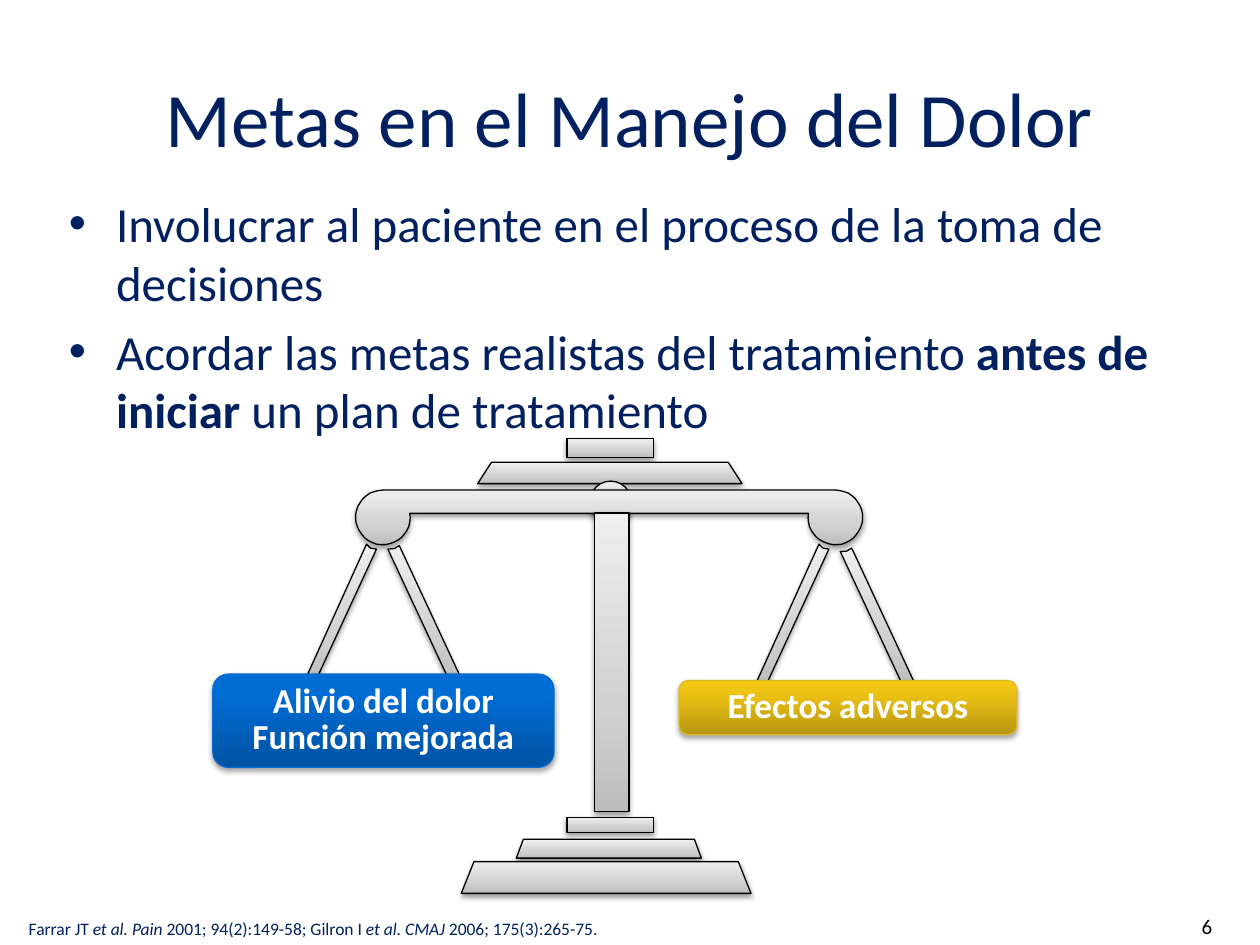
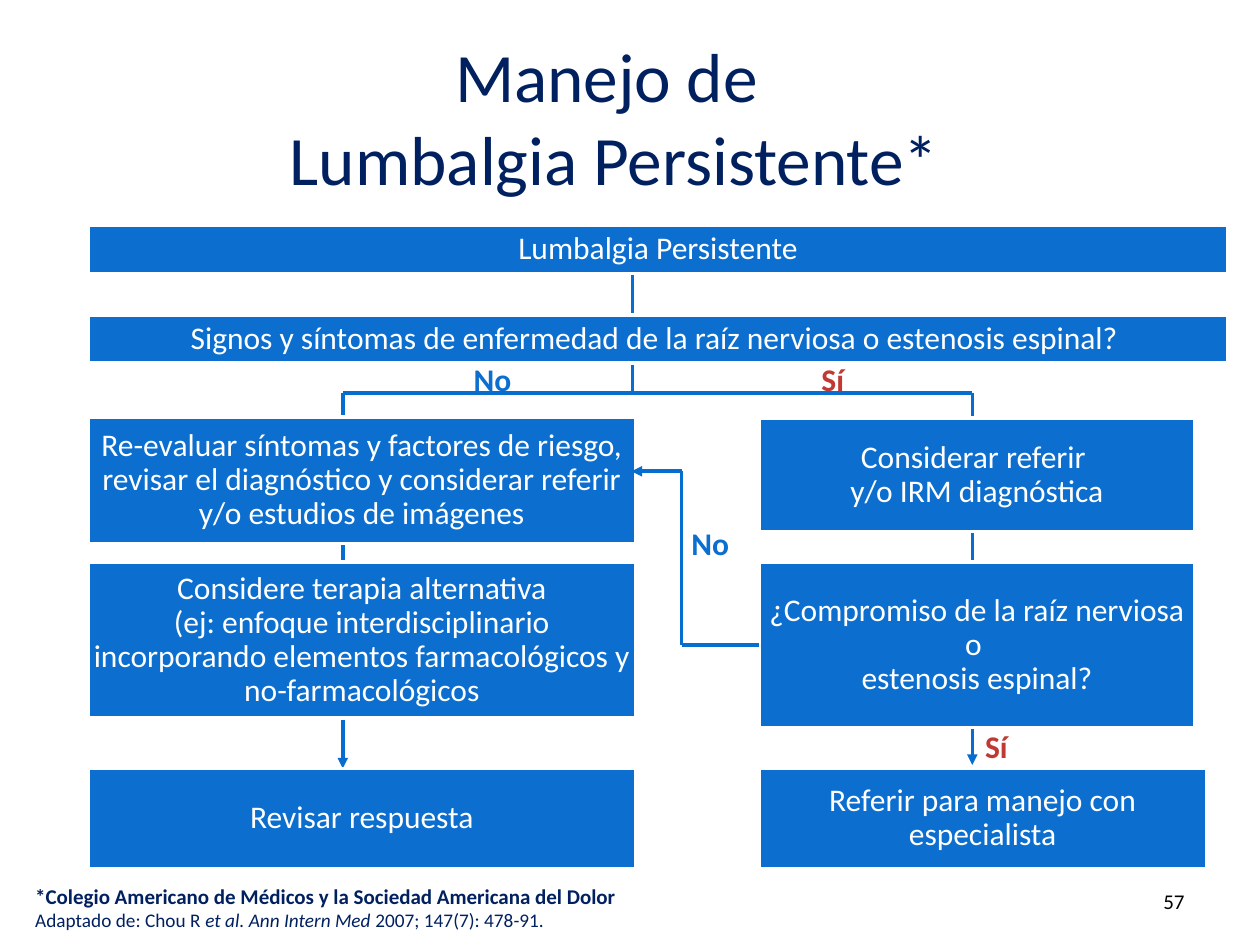
import math

import lxml.etree
import pptx
import pptx.dml.color
import pptx.enum.shapes
import pptx.enum.text
import pptx.oxml.ns
import pptx.util

Cm = pptx.util.Cm
Pt = pptx.util.Pt
qn = pptx.oxml.ns.qn
KIND = pptx.enum.shapes.MSO_SHAPE
ALIGN = pptx.enum.text.PP_ALIGN
ANCHOR = pptx.enum.text.MSO_ANCHOR

FONT = "Calibri"
HUES = {
    "navy": "002060",
    "black": "000000",
    "white": "FFFFFF",
    "box": "0C6FCF",
    "line": "076DCF",
    "red": "C03932",
    "gold": "DCB92B",
}
FADES = {
    "steel": ((0, "BDBDBD"), (35, "D1D1D1"), (100, "EEEEEE")),
    "blue": ((0, "0053A3"), (80, "006CD4"), (100, "006CD5")),
    "gold": ((0, "B89710"), (80, "EFC415"), (100, "F5C811")),
}


def rgb(hue):
    return pptx.dml.color.RGBColor.from_string(HUES[hue])


def sub(node, tag, **attrs):
    return lxml.etree.SubElement(node, qn(tag), attrs)


def write(frame, paras, size, hue, bold=None, align=ALIGN.LEFT, lead=None):
    """Fill a frame; each paragraph is a string or a list of (text, style) runs."""
    frame.word_wrap = True
    for i, para in enumerate(paras):
        line = frame.paragraphs[0] if i == 0 else frame.add_paragraph()
        if isinstance(para, str):
            line.text = para
        else:
            for text, style in para:
                run = line.add_run()
                run.text = text
                if style == "i":
                    run.font.italic = True
                elif style == "b":
                    run.font.bold = True
        line.alignment = align
        if lead:
            line.line_spacing = lead
        line.font.name = FONT
        line.font.size = Pt(size)
        line.font.bold = bold
        line.font.color.rgb = rgb(hue)
    return frame.paragraphs


def place(shape, left, top, width, height):
    shape.left, shape.top = Cm(left), Cm(top)
    shape.width, shape.height = Cm(width), Cm(height)


def start(deck, title, box, size, lead=None):
    """Add a title-only slide and set its title."""
    slide = deck.slides.add_slide(deck.slide_layouts[5])
    head = slide.shapes.title
    place(head, *box)
    head.text_frame.vertical_anchor = ANCHOR.MIDDLE
    write(head.text_frame, [title], size, "navy", align=ALIGN.CENTER, lead=lead)
    return slide


def note(slide, box, paras, size, hue="navy", **style):
    frame = slide.shapes.add_textbox(*map(Cm, box)).text_frame
    return write(frame, paras, size, hue, **style)


def number(slide, text, left, top):
    note(slide, (left, top, 5.92, 0.76), [text], 12, "black", align=ALIGN.RIGHT)


def bullet(line):
    props = line._p.get_or_add_pPr()
    props.set("marL", str(Cm(0.95)))
    props.set("indent", str(-Cm(0.95)))
    mark = lxml.etree.Element(qn("a:buChar"), char="•")
    face = lxml.etree.Element(qn("a:buFont"), typeface="Arial")
    rest = props.find(qn("a:defRPr"))
    for node in (face, mark):
        rest.addprevious(node)


def fade(shape, name, edge, alpha):
    """Give a shape an upward gradient, a thin edge and a soft shadow."""
    shape.fill.gradient()
    shape.fill.gradient_angle = 90
    props = shape.element.spPr
    stops = props.find(".//" + qn("a:gsLst"))
    for stop in list(stops):
        stops.remove(stop)
    for point, hue in FADES[name]:
        stop = sub(stops, "a:gs", pos=str(point * 1000))
        sub(stop, "a:srgbClr", val=hue)
    shape.line.color.rgb = rgb(edge)
    shape.line.width = Pt(0.75)
    shape.shadow.inherit = False
    glow = sub(props.find(qn("a:effectLst")), "a:outerShdw",
               blurRad=str(Pt(3.1)), dist=str(Pt(1.7)), dir="5400000",
               rotWithShape="0")
    tint = sub(glow, "a:srgbClr", val=HUES["black"])
    sub(tint, "a:alpha", val=str(alpha * 1000))


def steel(shapes, kind, box, slant=None):
    part = shapes.add_shape(kind, *map(Cm, box))
    if slant:
        part.adjustments[0] = slant
    fade(part, "steel", "black", 38)


def outline(shapes, points):
    """Draw a closed steel outline through points in centimetres."""
    grid = [(x * 100, y * 100) for x, y in points]
    pen = shapes.build_freeform(*grid[0], scale=Cm(0.01))
    pen.add_line_segments(grid[1:], close=True)
    fade(pen.convert_to_shape(), "steel", "black", 38)


def beam(shapes):
    """Draw the crossbar with a round knob at each end."""
    mid, reach, level, radius = 12.28, 4.56, 10.43, 0.55
    turns = [math.radians(-90 - 278 * i / 30) for i in range(31)]
    knob = [(mid - reach + radius * math.cos(t), level + radius * math.sin(t))
            for t in turns]
    outline(shapes, knob + [(2 * mid - x, y) for x, y in reversed(knob)])


def scale(slide):
    parts = slide.shapes.add_group_shape().shapes
    steel(parts, KIND.RECTANGLE, (11.43, 8.84, 1.75, 0.38))
    steel(parts, KIND.TRAPEZOID, (9.63, 9.32, 5.33, 0.43), 0.65)
    steel(parts, KIND.OVAL, (11.89, 9.7, 0.84, 0.84))
    beam(parts)
    steel(parts, KIND.RECTANGLE, (11.99, 10.34, 0.69, 6.02))
    steel(parts, KIND.RECTANGLE, (11.43, 16.48, 1.75, 0.3))
    steel(parts, KIND.TRAPEZOID, (10.41, 16.92, 3.73, 0.38), 0.37)
    steel(parts, KIND.TRAPEZOID, (9.3, 17.37, 5.84, 0.64), 0.4)
    outer = [(7.39, 10.97), (7.47, 11.05), (7.59, 11.07), (6.32, 13.82), (6.1, 13.82)]
    inner = [(7.82, 11.07), (7.95, 11.06), (8.05, 11), (9.35, 13.79), (9.09, 13.79)]
    for shift, drop in ((0, 0), (9.12, 0.05)):
        outline(parts, [(x + shift, y) for x, y in outer])
        outline(parts, [(x + shift, y + drop) for x, y in inner])


def pan(slide, box, paras, name, edge):
    shape = slide.shapes.add_shape(KIND.ROUNDED_RECTANGLE, *map(Cm, box))
    fade(shape, name, edge, 35)
    shape.text_frame.vertical_anchor = ANCHOR.MIDDLE
    write(shape.text_frame, paras, 20, "white", bold=True,
          align=ALIGN.CENTER, lead=0.85)


def step(slide, box, text):
    shape = slide.shapes.add_shape(KIND.RECTANGLE, *map(Cm, box))
    shape.shadow.inherit = False
    shape.fill.solid()
    shape.fill.fore_color.rgb = rgb("box")
    shape.line.color.rgb = rgb("white")
    shape.line.width = Pt(2)
    frame = shape.text_frame
    frame.vertical_anchor = ANCHOR.MIDDLE
    frame.margin_left = frame.margin_right = Cm(0.03)
    frame.margin_top = frame.margin_bottom = Cm(0.03)
    write(frame, [text], 18, "white", align=ALIGN.CENTER, lead=0.9)
    return shape


def link(slide, x1, y1, x2, y2, arrow=False):
    line = slide.shapes.add_connector(
        pptx.enum.shapes.MSO_CONNECTOR.STRAIGHT, *map(Cm, (x1, y1, x2, y2)))
    line.line.color.rgb = rgb("line")
    line.line.width = Pt(2)
    props = line.element.spPr
    if arrow:
        sub(props.find(qn("a:ln")), "a:tailEnd", type="triangle")
    sub(props, "a:effectLst")
    return line


def tag(slide, left, top, text, hue):
    note(slide, (left, top, 1.6, 1.02), [text], 18, hue, bold=True)


def goals(deck):
    slide = start(deck, "Metas en el Manejo del Dolor", (1.27, 0.91, 22.86, 3.18), 44, 0.85)
    note(slide, (0.33, 18.39, 22.4, 0.66), [[
        ("Farrar JT ", ""), ("et al. Pain ", "i"),
        ("2001; 94(2):149-58; Gilron I ", ""), ("et al. CMAJ", "i"),
        (" 2006; 175(3):265-75.", "")]], 10)
    number(slide, "6", 18.77, 18.29)
    points = note(slide, (1.14, 3.78, 22.86, 5.1), [
        "Involucrar al paciente en el proceso de la toma de decisiones",
        [("Acordar las metas realistas del tratamiento ", ""),
         ("antes de iniciar", "b"), (" un plan de tratamiento", "")]], 28)
    for line in points:
        bullet(line)
    points[1].space_before = Pt(5.6)
    scale(slide)
    pan(slide, (4.29, 13.59, 6.88, 1.88), ["Alivio del dolor", "Función mejorada"],
        "blue", "line")
    pan(slide, (13.69, 13.72, 6.81, 1.09), ["Efectos adversos"], "gold", "gold")


def flow(deck):
    slide = start(deck, "Manejo de \vLumbalgia Persistente*", (1.27, 0.76, 22.23, 3.18), 39.6)
    number(slide, "57", 18.21, 17.78)
    lines = note(slide, (0.46, 17.68, 21.64, 1.24), [
        "*Colegio Americano de Médicos y la Sociedad Americana del Dolor",
        [("Adaptado de: Chou R ", ""), ("et al. Ann Intern Med ", "i"),
         ("2007; 147(7): 478-91.", "")]], 11)
    lines[0].font.size = Pt(12)
    lines[0].font.bold = True

    left, right, fork = 6.91, 19.6, 7.92
    link(slide, 12.75, 5.49, 12.75, fork)
    link(slide, right, fork, right, 15.42, arrow=True)
    link(slide, left, fork, left, 15.49, arrow=True)

    near, far = 1.77, 15.3
    step(slide, (near, 4.55, 22.99, 0.97), "Lumbalgia Persistente")
    step(slide, (near, 6.35, 22.99, 0.97),
         "Signos y síntomas de enfermedad de la raíz nerviosa o estenosis espinal? ")
    step(slide, (near, 8.41, 11.05, 2.55),
         "Re-evaluar síntomas y factores de riesgo, revisar el diagnóstico "
         "y considerar referir y/o estudios de imágenes")
    step(slide, (near, 11.33, 11.05, 3.15),
         "Considere terapia alternativa\v(ej: enfoque interdisciplinario\v"
         "incorporando elementos farmacológicos y no-farmacológicos")
    step(slide, (near, 15.49, 11.05, 2.02), "Revisar respuesta")
    step(slide, (far, 8.43, 8.79, 2.29), "Considerar referir \vy/o IRM diagnóstica")
    nerve = step(slide, (far, 11.33, 8.79, 3.34),
                 "¿Compromiso de la raíz nerviosa o \vestenosis espinal?")
    step(slide, (far, 15.49, 9.02, 2.02), "Referir para manejo con especialista")

    link(slide, right, fork, left, fork)
    tag(slide, 9.3, 7.14, "No", "box")
    tag(slide, 13.69, 10.44, "No", "box")
    tag(slide, 16.31, 7.14, "Sí", "red")
    tag(slide, 19.61, 14.53, "Sí", "red")

    bend, high, low = 13.74, 9.5, 13
    link(slide, bend, high, bend, low)
    link(slide, bend, high, 12.73, high, arrow=True)
    link(slide, far, low, bend, low).begin_connect(nerve, 1)


def main():
    deck = pptx.Presentation()
    deck.slide_width, deck.slide_height = Cm(25.4), Cm(19.05)
    goals(deck)
    flow(deck)
    deck.save("out.pptx")


if __name__ == "__main__":
    main()
